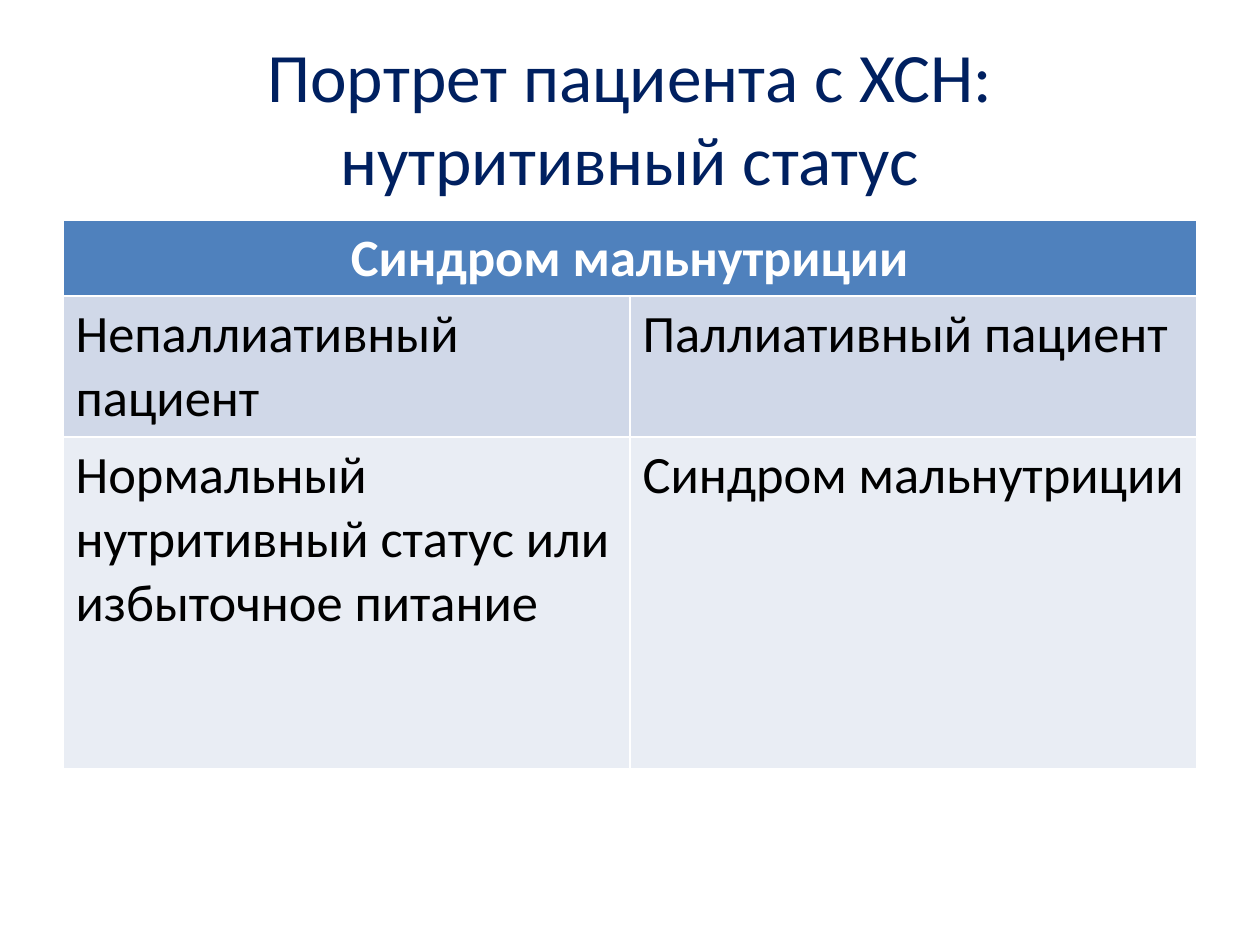
from pptx import Presentation
from pptx import util as u
from pptx.dml.color import RGBColor
from pptx.enum import text

FONT = "Calibri"
TITLE = "Портрет пациента с ХСН: нутритивный статус"
HEADER = "Синдром мальнутриции"
# Row height, fill, text colour, cell texts
ROWS = [
    (0.6, "4F81BD", "FFFFFF", [HEADER, ""]),
    (1.12, "D0D8E8", "000000", ["Непаллиативный пациент", "Паллиативный пациент"]),
    (2.63, "E9EDF4", "000000",
     ["Нормальный нутритивный статус или избыточное питание", "Синдром мальнутриции"]),
]
LEFT, WIDTH = 0.5, 9
TABLE_TOP = 1.75


def color(value):
    return RGBColor.from_string(value)


def write(frame, words, size, ink, bold=False, align=text.PP_ALIGN.LEFT):
    frame.text = words
    para = frame.paragraphs[0]
    para.alignment = align
    for span in para.runs:
        span.font.name = FONT
        span.font.size = u.Pt(size)
        span.font.bold = bold
        span.font.color.rgb = color(ink)


def add_title(slide):
    box = slide.shapes.add_textbox(u.Inches(LEFT), u.Inches(0.3),
                                   u.Inches(WIDTH), u.Inches(1.25))
    frame = box.text_frame
    frame.word_wrap = True
    frame.vertical_anchor = text.MSO_ANCHOR.MIDDLE
    write(frame, TITLE, 39.6, "002060", align=text.PP_ALIGN.CENTER)


def add_status_table(slide):
    height = sum(row[0] for row in ROWS)
    table = slide.shapes.add_table(len(ROWS), 2, u.Inches(LEFT), u.Inches(TABLE_TOP),
                                   u.Inches(WIDTH), u.Inches(height)).table
    for index, (row_height, fill, ink, words) in enumerate(ROWS):
        table.rows[index].height = u.Inches(row_height)
        is_header = index == 0
        align = text.PP_ALIGN.CENTER if is_header else text.PP_ALIGN.LEFT
        for column, label in enumerate(words):
            cell = table.cell(index, column)
            cell.fill.solid()
            cell.fill.fore_color.rgb = color(fill)
            write(cell.text_frame, label, 30, ink, is_header, align)
    table.cell(0, 0).merge(table.cell(0, 1))


def main():
    deck = Presentation()
    deck.slide_width, deck.slide_height = u.Inches(10), u.Inches(7.5)
    slide = deck.slides.add_slide(deck.slide_layouts[6])
    add_title(slide)
    add_status_table(slide)
    deck.save("out.pptx")


if __name__ == "__main__":
    main()
